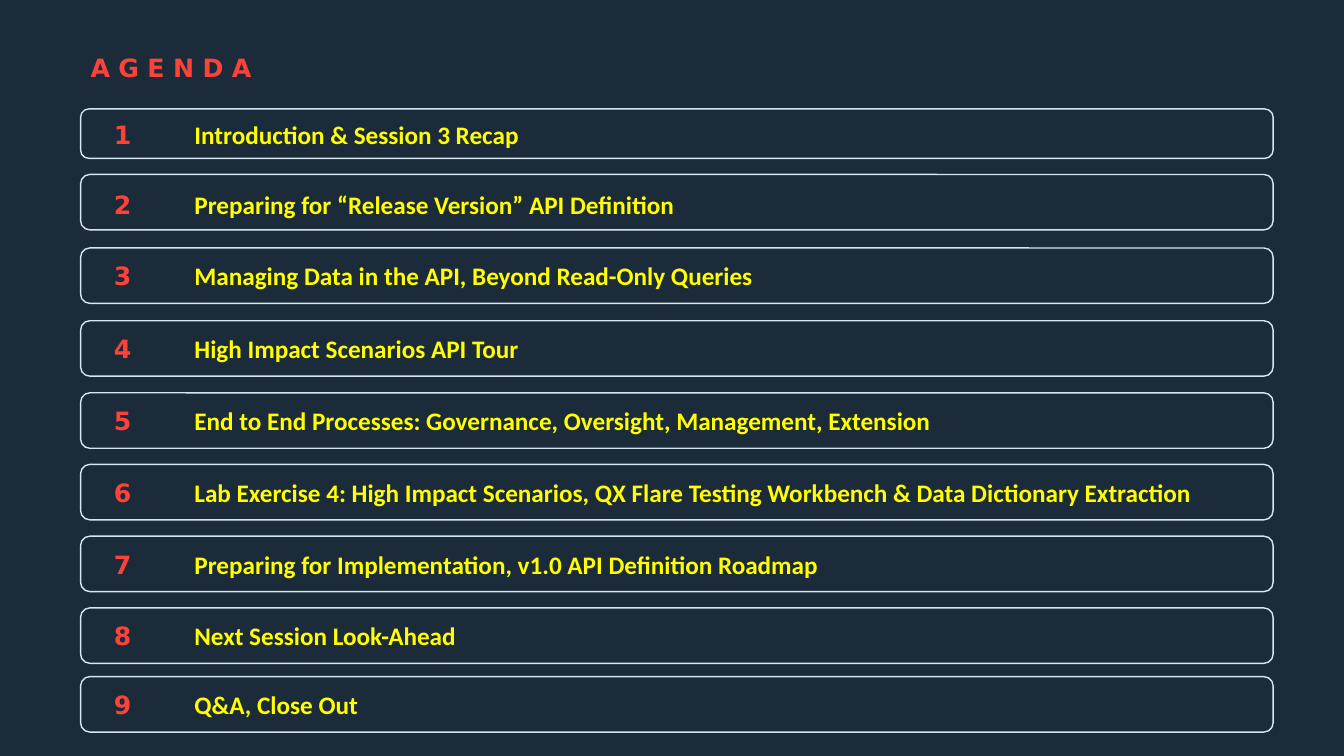
import pptx
import pptx.util
from pptx.dml.color import RGBColor
from pptx.enum.shapes import MSO_SHAPE
from pptx.enum.text import MSO_ANCHOR

Pt = pptx.util.Pt

TITLE = "AGENDA"
# topic, frame top, frame height, text top
AGENDA = [
    ("Introduction & Session 3 Recap", 77.8, 35.3, 81.4),
    ("Preparing for “Release Version” API Definition", 124.6, 39.6, 131.8),
    ("Managing Data in the API, Beyond Read-Only Queries", 177.1, 39.6, 182.4),
    ("High Impact Scenarios API Tour", 229.1, 39.6, 234.6),
    ("End to End Processes: Governance, Oversight, Management, Extension", 280.6, 39.6, 286),
    ("Lab Exercise 4: High Impact Scenarios, QX Flare Testing Workbench & Data Dictionary Extraction",
     331.7, 39.6, 337.2),
    ("Preparing for Implementation, v1.0 API Definition Roadmap", 383, 39.6, 388.6),
    ("Next Session Look-Ahead", 434.2, 39.6, 439.8),
    ("Q&A, Close Out", 483.3, 39.6, 488.9),
]

NAVY = RGBColor(0x1C, 0x2B, 0x39)
RED = RGBColor(0xFB, 0x43, 0x3A)
YELLOW = RGBColor(0xFF, 0xFF, 0x00)
PALE_BLUE = RGBColor(0xD8, 0xE6, 0xF0)

HEADING = {"name": "DejaVu Sans", "size": Pt(18), "bold": True}
BODY = {"name": "Calibri", "size": Pt(18), "bold": True}

FRAME_LEFT, FRAME_WIDTH = 57.6, 851.8
NUMBER_LEFT, NUMBER_WIDTH = 74.2, 43.9
TOPIC_LEFT, TOPIC_WIDTH = 131.8, 737.3
TEXT_HEIGHT = 28.8


def add_text(page, text, left, top, width, height, style, color):
    box = page.shapes.add_textbox(Pt(left), Pt(top), Pt(width), Pt(height))
    box.text_frame.word_wrap = True
    box.text_frame.vertical_anchor = MSO_ANCHOR.MIDDLE
    para = box.text_frame.paragraphs[0]
    span = para.add_run()
    span.text = text
    for name, value in style.items():
        setattr(span.font, name, value)
    span.font.color.rgb = color
    return para


def add_frame(page, top, height):
    frame = page.shapes.add_shape(MSO_SHAPE.ROUNDED_RECTANGLE, Pt(FRAME_LEFT), Pt(top),
                                  Pt(FRAME_WIDTH), Pt(height))
    frame.shadow.inherit = False
    frame.fill.background()
    frame.line.color.rgb = PALE_BLUE
    frame.line.width = Pt(1)


def main():
    deck = pptx.Presentation()
    deck.slide_width, deck.slide_height = Pt(960), Pt(540)
    page = deck.slides.add_slide(deck.slide_layouts[6])
    page.background.fill.solid()
    page.background.fill.fore_color.rgb = NAVY

    title = add_text(page, TITLE, FRAME_LEFT, 33.1, 705.6, 33.1, HEADING, RED)
    title.line_spacing = 0.9
    title.runs[0].font._element.set("spc", "600")

    for number, (topic, top, height, text_top) in enumerate(AGENDA, start=1):
        add_frame(page, top, height)
        add_text(page, str(number), NUMBER_LEFT, text_top, NUMBER_WIDTH, TEXT_HEIGHT, HEADING, RED)
        add_text(page, topic, TOPIC_LEFT, text_top, TOPIC_WIDTH, TEXT_HEIGHT, BODY, YELLOW)

    deck.save("out.pptx")


if __name__ == "__main__":
    main()
